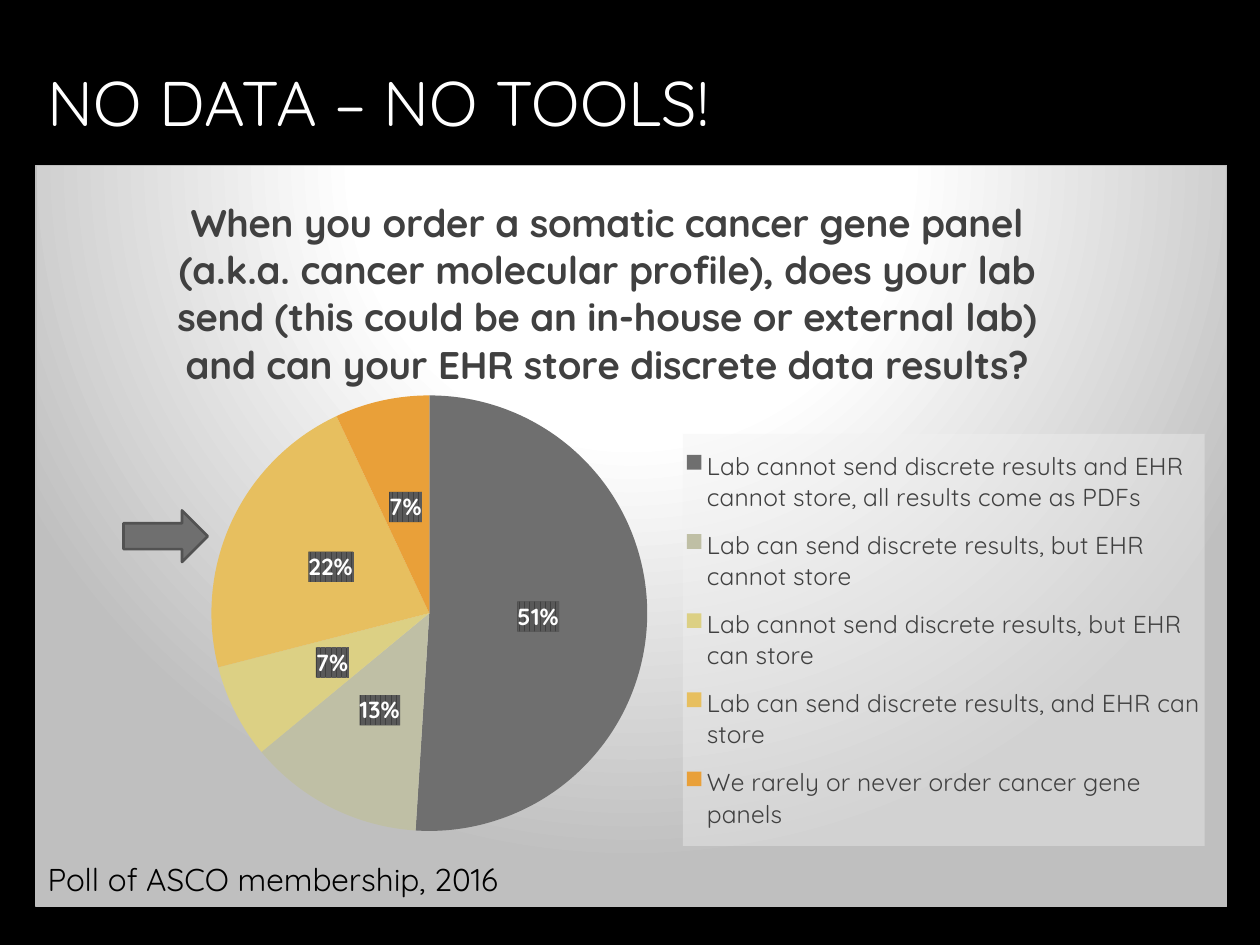
from lxml.etree import SubElement
from pptx import Presentation
from pptx.chart.data import CategoryChartData
from pptx.dml.color import RGBColor
from pptx.enum.chart import XL_CHART_TYPE, XL_LABEL_POSITION, XL_LEGEND_POSITION
from pptx.enum.shapes import MSO_SHAPE
from pptx.enum.text import MSO_ANCHOR, PP_ALIGN
from pptx.oxml import parse_xml
from pptx.oxml.ns import nsdecls, qn
from pptx.util import Cm, Pt

# Content
TITLE = "NO DATA – NO TOOLS!"
QUESTION = ("When you order a somatic cancer gene panel (a.k.a. cancer molecular profile), "
            "does your lab send (this could be an in-house or external lab) "
            "and can your EHR store discrete data results?")
SOURCE = "Poll of ASCO membership, 2016"
FONT = "Quicksand"
BLACK = RGBColor(0x00, 0x00, 0x00)
WHITE = RGBColor(0xFF, 0xFF, 0xFF)
DARK = RGBColor(0x40, 0x40, 0x40)
GREY = RGBColor(0x6F, 0x6F, 0x6F)
EDGE = RGBColor(0x52, 0x52, 0x52)
ANSWERS = [
    ("Lab cannot send discrete results and EHR cannot store, all results come as PDFs",
     51, GREY),
    ("Lab can send discrete results, but EHR cannot store",
     13, RGBColor(0xBF, 0xBF, 0xA5)),
    ("Lab cannot send discrete results, but EHR can store",
     7, RGBColor(0xDC, 0xD0, 0x84)),
    ("Lab can send discrete results, and EHR can store",
     22, RGBColor(0xE7, 0xBF, 0x5F)),
    ("We rarely or never order cancer gene panels",
     7, RGBColor(0xE9, 0xA0, 0x39)),
]

# Fills and lines that need XML
PANEL_STYLE = """<a:gradFill rotWithShape="1"><a:gsLst>
<a:gs pos="0"><a:srgbClr val="FFFFFF"/></a:gs>
<a:gs pos="39000"><a:srgbClr val="FFFFFF"/></a:gs>
<a:gs pos="100000"><a:srgbClr val="BFBFBF"/></a:gs></a:gsLst>
<a:path path="circle"><a:fillToRect l="50000" t="-80000" r="50000" b="180000"/></a:path>
</a:gradFill><a:ln w="9525"><a:solidFill><a:srgbClr val="BFBFBF"/></a:solidFill></a:ln>"""
LABEL_STYLE = """<a:pattFill prst="dkVert"><a:fgClr><a:srgbClr val="595959"/></a:fgClr>
<a:bgClr><a:srgbClr val="404040"/></a:bgClr></a:pattFill>"""
LEGEND_STYLE = """<a:solidFill><a:srgbClr val="F2F2F2"><a:alpha val="39000"/></a:srgbClr>
</a:solidFill>"""


def style(content):
    return parse_xml(f'<c:spPr {nsdecls("c", "a")}>{content}</c:spPr>')


def set_layout(parent, before, x, y, size=(), inner=False):
    """Put a manual layout after the child named before, or first if there is none."""
    for old in parent.findall(qn("c:layout")):
        parent.remove(old)
    element = parse_xml(f'<c:layout {nsdecls("c")}><c:manualLayout/></c:layout>')
    settings = [("layoutTarget", "inner")] if inner else []
    settings += [("xMode", "edge"), ("yMode", "edge"), ("x", x), ("y", y)]
    settings += zip("wh", size)
    for name, value in settings:
        SubElement(element[0], qn(f"c:{name}")).set("val", str(value))
    if before:
        parent.find(qn(before)).addnext(element)
    else:
        parent.insert(0, element)


def set_font(font, size, color, bold=False):
    font.name, font.size, font.bold = FONT, Pt(size), bold
    font.color.rgb = color


def place(shape, left, top, width, height):
    shape.left, shape.top = Cm(left), Cm(top)
    shape.width, shape.height = Cm(width), Cm(height)


deck = Presentation()
deck.slide_width, deck.slide_height = Cm(25.4), Cm(19.05)
page = deck.slides.add_slide(deck.slide_layouts[5])
page.background.fill.solid()
page.background.fill.fore_color.rgb = BLACK

# Title
title = page.shapes.title
place(title, 0.71, 0.1, 20.78, 3.89)
title.text_frame.text = TITLE
title.text_frame.vertical_anchor = MSO_ANCHOR.MIDDLE
para = title.text_frame.paragraphs[0]
para.alignment = PP_ALIGN.LEFT
set_font(para.runs[0].font, 36, WHITE)

# Pie chart on its panel
data = CategoryChartData()
data.categories = [answer for answer, _, _ in ANSWERS]
data.add_series("Series 1", [share for _, share, _ in ANSWERS])
chart = page.shapes.add_chart(
    XL_CHART_TYPE.PIE, Cm(0.71), Cm(3.33), Cm(24.03), Cm(14.96), data).chart
set_font(chart.font, 10, WHITE)
chart_space = chart.element
chart_space.find(qn("c:chart")).addnext(style(PANEL_STYLE))

# Question above the pie
chart.has_title = True
chart.chart_title.include_in_layout = False
chart.chart_title.text_frame.text = QUESTION
set_font(chart.chart_title.text_frame.paragraphs[0].runs[0].font, 22, DARK, bold=True)
set_layout(chart_space.find(".//" + qn("c:title")), "c:tx", 0.113, 0.03)

# Slices and their labels
plot = chart.plots[0]
plot.vary_by_categories = True
set_layout(chart_space.find(".//" + qn("c:plotArea")), None,
           0.1475, 0.2935, (0.366, 0.621), inner=True)
series = plot.series[0]
for index, (_, _, color) in enumerate(ANSWERS):
    fill = series.points[index].format.fill
    fill.solid()
    fill.fore_color.rgb = color
labels = series.data_labels
labels.show_percentage, labels.show_value = True, False
labels.number_format, labels.number_format_is_linked = "0%", False
labels.position = XL_LABEL_POSITION.CENTER
set_font(labels.font, 13.3, WHITE, bold=True)
series_labels = chart_space.find(".//" + qn("c:ser")).find(qn("c:dLbls"))
series_labels.find(qn("c:numFmt")).addnext(style(LABEL_STYLE))

# Legend
chart.has_legend = True
legend = chart.legend
legend.position = XL_LEGEND_POSITION.RIGHT
legend.include_in_layout = False
set_font(legend.font, 14, DARK)
legend_element = chart_space.find(".//" + qn("c:legend"))
set_layout(legend_element, "c:legendPos", 0.5435, 0.362, (0.438, 0.556))
legend_element.find(qn("c:overlay")).addnext(style(LEGEND_STYLE))

# Source note
note = page.shapes.add_textbox(Cm(0.71), Cm(17.22), Cm(13.11), Cm(1.02))
note.text_frame.word_wrap = True
note.text_frame.text = SOURCE
set_font(note.text_frame.paragraphs[0].runs[0].font, 18, BLACK)

# Arrow to the slice where results can be sent and stored
arrow = page.shapes.add_shape(MSO_SHAPE.RIGHT_ARROW, Cm(2.49), Cm(10.29), Cm(1.7), Cm(1.04))
arrow.shadow.inherit = False
arrow.fill.solid()
arrow.fill.fore_color.rgb = GREY
arrow.line.color.rgb = EDGE
arrow.line.width = Pt(1.5)

deck.save("out.pptx")
